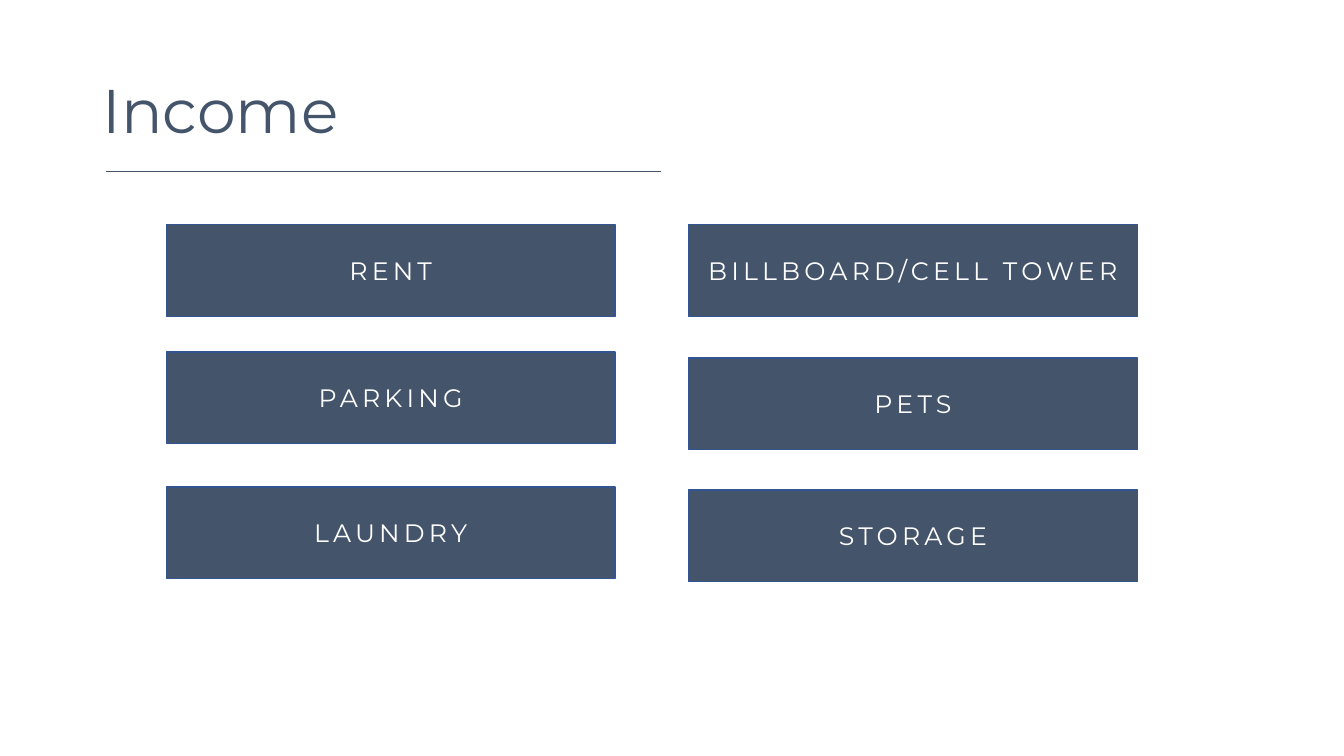
from pptx import Presentation
from pptx.dml.color import RGBColor
from pptx.enum.shapes import MSO_CONNECTOR, MSO_SHAPE
from pptx.enum.text import MSO_ANCHOR, PP_ALIGN
from pptx.oxml.ns import qn
from pptx.util import Inches, Pt
from lxml.etree import SubElement

# Content: each column has a left edge and (label, top) boxes, in inches
TITLE = "Income"
COLUMNS = [
    (1.65, [("RENT", 2.23), ("PARKING", 3.49), ("LAUNDRY", 4.83)]),
    (6.83, [("BILLBOARD/CELL TOWER", 2.23), ("PETS", 3.55), ("STORAGE", 4.86)]),
]
BOX_W, BOX_H = 4.45, 0.91
RULE_LEFT, RULE_RIGHT, RULE_Y = 1.05, 6.56, 1.7
COLORS = {"slate": "44546A", "edge": "325491", "white": "FFFFFF"}
FONT = "Montserrat"
TRACKING = 3  # points between letters


def rgb(name):
    return RGBColor.from_string(COLORS[name])


def write(tf, text, size, color):
    tf.word_wrap = True
    tf.vertical_anchor = MSO_ANCHOR.MIDDLE
    p = tf.paragraphs[0]
    r = p.add_run()
    r.text = text
    p.font.name = FONT
    p.font.size = Pt(size)
    p.font.color.rgb = rgb(color)
    return p, r


def add_box(s, label, left, top):
    sp = s.shapes.add_shape(MSO_SHAPE.RECTANGLE, Inches(left), Inches(top),
                            Inches(BOX_W), Inches(BOX_H))
    sp.shadow.inherit = False
    sp.fill.solid()
    sp.fill.fore_color.rgb = rgb("slate")
    sp.line.color.rgb = rgb("edge")
    sp.line.width = Pt(1)
    p, r = write(sp.text_frame, label, 18, "white")
    p.alignment = PP_ALIGN.CENTER
    r.font._element.set("spc", str(TRACKING * 100))


prs = Presentation()
prs.slide_width, prs.slide_height = Inches(13.33), Inches(7.5)
s = prs.slides.add_slide(prs.slide_layouts[6])

# Title
tb = s.shapes.add_textbox(Inches(0.92), Inches(0.4), Inches(11.5), Inches(1.45))
p, r = write(tb.text_frame, TITLE, 44, "slate")
p.line_spacing = 0.9

# Rule under the title
rule = s.shapes.add_connector(MSO_CONNECTOR.STRAIGHT, Inches(RULE_LEFT), Inches(RULE_Y),
                              Inches(RULE_RIGHT), Inches(RULE_Y))
rule.line.color.rgb = rgb("slate")
rule.line.width = Pt(1)
SubElement(rule._element.spPr, qn("a:effectLst"))

# Income sources
for left, boxes in COLUMNS:
    for label, top in boxes:
        add_box(s, label, left, top)

prs.save("out.pptx")
